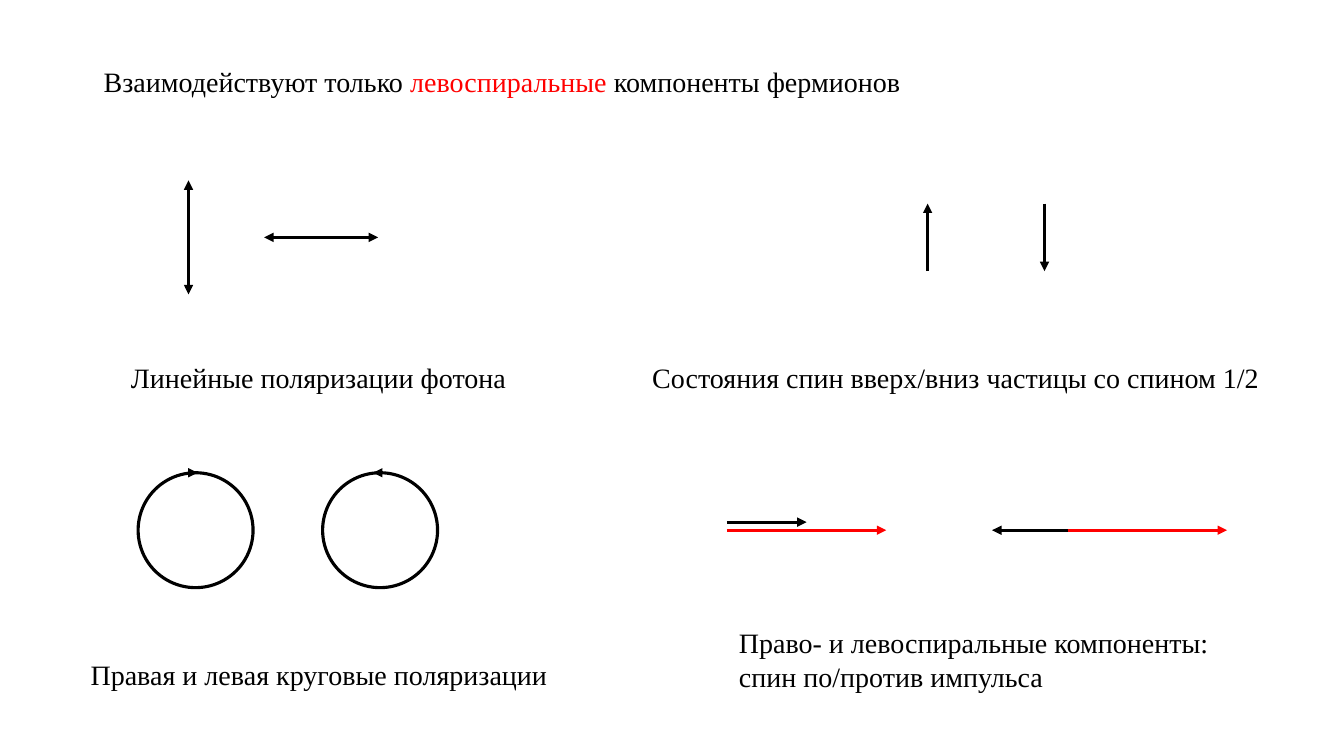
from lxml import etree
from pptx import Presentation
from pptx.dml.color import RGBColor
from pptx.enum.shapes import MSO_CONNECTOR, MSO_SHAPE
from pptx.enum.text import MSO_AUTO_SIZE
from pptx.oxml.ns import qn
from pptx.util import Inches, Pt

STRAIGHT = MSO_CONNECTOR.STRAIGHT
ELLIPSE = MSO_SHAPE.OVAL
GROW = MSO_AUTO_SIZE.SHAPE_TO_FIT_TEXT
BLACK, RED = "000000", "FF0000"
FONT = "Times New Roman"
TEXT_SIZE = Pt(20)
LINE_WIDTH = Pt(2.25)


def color(hex_string):
    return RGBColor.from_string(hex_string)


def add_text(slide, left, top, width, height, runs, wrap=False):
    """Add one paragraph made of (text, colour) runs."""
    box = slide.shapes.add_textbox(Inches(left), Inches(top), Inches(width), Inches(height))
    frame = box.text_frame
    frame.word_wrap = wrap
    frame.auto_size = GROW
    paragraph = frame.paragraphs[0]
    for text, text_color in runs:
        run = paragraph.add_run()
        run.text = text
        run.font.name = FONT
        run.font.size = TEXT_SIZE
        run.font.color.rgb = color(text_color)


def add_arrow(shapes, start, end, line_color=BLACK, both_ends=False):
    points = [Inches(value) for value in (*start, *end)]
    arrow = shapes.add_connector(STRAIGHT, *points)
    arrow.line.color.rgb = color(line_color)
    arrow.line.width = LINE_WIDTH
    line = arrow.line._get_or_add_ln()
    for tag in ("a:headEnd", "a:tailEnd") if both_ends else ("a:tailEnd",):
        etree.SubElement(line, qn(tag), type="triangle")
    etree.SubElement(arrow._element.spPr, qn("a:effectLst"))


def add_heading(slide, left, top, width, height):
    runs = [
        ("Взаимодействуют только ", BLACK),
        ("левоспиральные", RED),
        (" компоненты фермионов", BLACK),
    ]
    add_text(slide, left, top, width, height, runs)


def add_linear_polarizations(slide, left, top, width, height):
    length = 1.13
    middle = top + length / 2
    vertical = left + 0.67
    horizontal = left + 1.42
    add_arrow(slide.shapes, (vertical, top), (vertical, top + length), both_ends=True)
    add_arrow(slide.shapes, (horizontal, middle), (horizontal + length, middle), both_ends=True)
    add_text(slide, left, top + height - 0.44, width, 0.44,
             [("Линейные поляризации фотона", BLACK)])


def add_circular_polarizations(slide, left, top, width, height):
    diameter = 1.14
    circles = [(0.57, 0.52, 0.59), (2.4, 0.6, 0.5)]
    for offset, arrow_start, arrow_end in circles:
        circle_left = left + offset
        circle = slide.shapes.add_shape(
            ELLIPSE, Inches(circle_left), Inches(top), Inches(diameter), Inches(diameter))
        circle.shadow.inherit = False
        circle.fill.background()
        circle.line.color.rgb = color(BLACK)
        circle.line.width = LINE_WIDTH
        add_arrow(slide.shapes, (circle_left + arrow_start, top), (circle_left + arrow_end, top))
    add_text(slide, left, top + height - 0.44, width, 0.44,
             [("Правая и левая круговые поляризации", BLACK)], wrap=True)


def add_spin_states(slide, left, top, width, height):
    bottom = top + 0.67
    up, down = left + 2.83, left + 3.99
    add_arrow(slide.shapes, (up, bottom), (up, top))
    add_arrow(slide.shapes, (down, top), (down, bottom))
    add_text(slide, left, top + height - 0.44, width, 0.44,
             [("Состояния спин вверх/вниз частицы со спином 1/2", BLACK)])


def add_helicities(slide, left, top, width, height):
    """Draw spin (black) along and against momentum (red)."""
    momentum_length = 1.58
    momentum_top = top + 0.08
    components = [(left - 0.02, top, 0.79), (left + 3.36, momentum_top, -0.75)]
    for origin, spin_top, spin_length in components:
        group = slide.shapes.add_group_shape()
        add_arrow(group.shapes, (origin, spin_top), (origin + spin_length, spin_top))
        add_arrow(group.shapes, (origin, momentum_top),
                  (origin + momentum_length, momentum_top), RED)
    add_text(slide, left, top + height - 0.77, width, 0.77,
             [("Право- и левоспиральные компоненты: спин по/против импульса", BLACK)], wrap=True)


def main():
    presentation = Presentation()
    presentation.slide_width = Inches(13.33)
    presentation.slide_height = Inches(7.5)
    slide = presentation.slides.add_slide(presentation.slide_layouts[6])
    add_heading(slide, 0.93, 0.59, 8.27, 0.44)
    add_linear_polarizations(slide, 1.2, 1.79, 4, 2.18)
    add_circular_polarizations(slide, 0.8, 4.69, 4.8, 2.22)
    add_spin_states(slide, 6.37, 2.02, 6.27, 1.95)
    add_helicities(slide, 7.23, 5.18, 4.96, 1.75)
    presentation.save("out.pptx")


if __name__ == "__main__":
    main()
